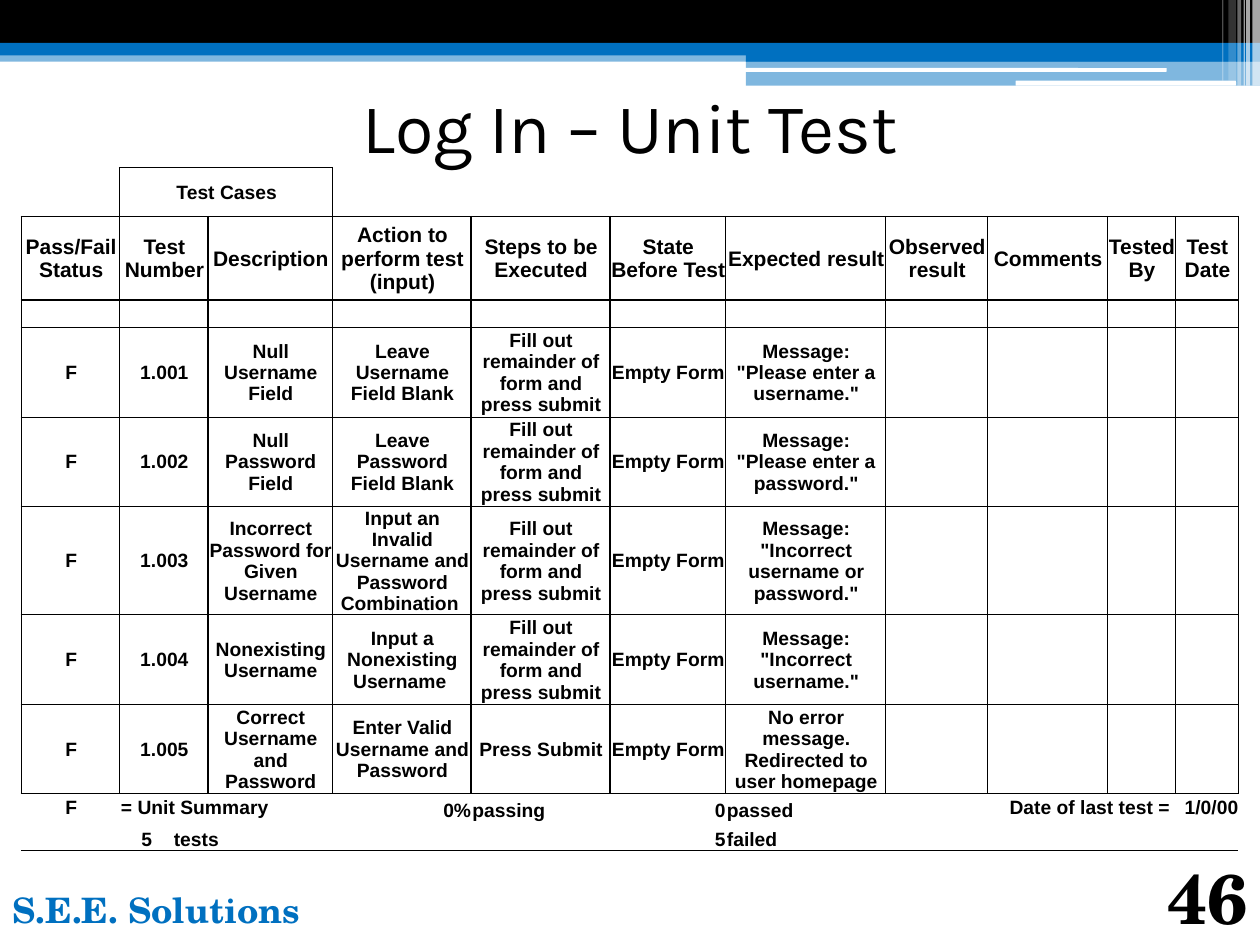
"""Build the log-in unit test slide with its banner, test table and footer."""
from lxml import etree
from pptx import Presentation
from pptx import util as u
from pptx.dml.color import RGBColor
from pptx.enum import shapes, text
from pptx.oxml import ns

SCALE = 9144
BLACK, BLUE, WHITE = "000000", "0070C0", "FFFFFF"
LEFT, CENTER, RIGHT = text.PP_ALIGN.LEFT, text.PP_ALIGN.CENTER, text.PP_ALIGN.RIGHT
MIDDLE, BOTTOM = text.MSO_ANCHOR.MIDDLE, text.MSO_ANCHOR.BOTTOM


def color(value):
    return RGBColor.from_string(value)


def write(frame, words, size, font, tint, bold, alignment):
    paragraph = frame.paragraphs[0]
    paragraph.alignment = alignment
    run = paragraph.add_run()
    run.text = words
    run.font.size = u.Pt(size)
    run.font.name = font
    run.font.bold = bold
    run.font.color.rgb = color(tint)


presentation = Presentation()
presentation.slide_width, presentation.slide_height = 1000 * SCALE, 750 * SCALE
slide = presentation.slides.add_slide(presentation.slide_layouts[5])

RECTANGLE, ROUNDED = shapes.MSO_SHAPE.RECTANGLE, shapes.MSO_SHAPE.ROUNDED_RECTANGLE
banner = [
    (RECTANGLE, 0, 40, 1000, 9, BLUE, 50),
    (RECTANGLE, 0, 0, 1000, 34, BLACK, 100),
    (RECTANGLE, 0, 34, 1000, 10, BLUE, 100),
    (RECTANGLE, 592, 39, 408, 10, BLUE, 100),
    (RECTANGLE, 592, 48, 408, 20, BLUE, 50),
    (ROUNDED, 591, 54, 335, 3, WHITE, 100),
    (ROUNDED, 806, 64, 175, 4, WHITE, 100),
    (RECTANGLE, 994, 0, 6, 68, WHITE, 65),
    (RECTANGLE, 989, 0, 3, 68, WHITE, 65),
    (RECTANGLE, 987, 0, 1, 68, WHITE, 60),
    (RECTANGLE, 982, 0, 3, 68, WHITE, 40),
    (RECTANGLE, 975, 0, 6, 64, WHITE, 20),
    (RECTANGLE, 970, 0, 1, 64, WHITE, 30),
]
for kind, left, top, width, height, tint, opacity in banner:
    shape = slide.shapes.add_shape(kind, left * SCALE, top * SCALE, width * SCALE, height * SCALE)
    shape.shadow.inherit = False
    shape.line.fill.background()
    shape.fill.solid()
    shape.fill.fore_color.rgb = color(tint)
    if opacity < 100:
        fill_color = shape.element.spPr.find(".//" + ns.qn("a:srgbClr"))
        etree.SubElement(fill_color, ns.qn("a:alpha"), val=str(opacity * 1000))

title = slide.shapes.title
title.left, title.top, title.width, title.height = 50 * SCALE, 50 * SCALE, 900 * SCALE, 100 * SCALE
title.text_frame.vertical_anchor = MIDDLE
write(title.text_frame, "Log In – Unit Test", 40, "Karla", BLACK, False, CENTER)
slide.shapes.element.append(title.element)

column_widths = [78, 42, 28, 99, 110, 110, 92, 127, 81, 95, 43, 11, 50]
row_heights = [39, 66, 22, 71, 71, 86, 71, 71, 22, 23]
headings = {0: "Pass/Fail Status", 1: "Test Number", 3: "Description",
            4: "Action to perform test (input)", 5: "Steps to be Executed",
            6: "State Before Test", 7: "Expected result", 8: "Observed result",
            9: "Comments", 10: "Tested By", 12: "Test Date"}
fill_out = "Fill out remainder of form and press submit"
cases = [
    ("Null Username Field", "Leave Username Field Blank", fill_out,
     'Message: "Please enter a username."'),
    ("Null Password Field", "Leave Password Field Blank", fill_out,
     'Message: "Please enter a password."'),
    ("Incorrect Password for Given Username",
     "Input an Invalid Username and Password Combination ", fill_out,
     'Message: "Incorrect username or password."'),
    ("Nonexisting Username", "Input a Nonexisting Username ", fill_out,
     'Message: "Incorrect username."'),
    ("Correct Username and Password", "Enter Valid Username and Password", "Press Submit",
     "No error message. Redirected to user homepage"),
]
rows = [{1: "Test Cases"}, headings, {}]
for number, (description, action, steps, expected) in enumerate(cases, 1):
    rows.append({0: "F", 1: f"1.00{number}", 3: description, 4: action, 5: steps,
                 6: "Empty Form", 7: expected})
rows.append({0: "F", 1: "= Unit Summary", 4: "0%", 5: "passing", 6: "0", 7: "passed",
             9: "Date of last test = ", 12: "1/0/00"})
rows.append({1: "5", 2: "tests", 6: "5", 7: "failed"})
summary_row, last_row = 8, 9
footer_alignment = {2: LEFT, 4: RIGHT, 5: LEFT, 6: RIGHT, 7: LEFT, 9: RIGHT, 12: RIGHT}
spans = {0: [(1, 3), (10, 11)], summary_row: [(1, 3), (9, 11)], last_row: [(2, 3), (9, 10)]}

table = slide.shapes.add_table(len(rows), len(column_widths), 17 * SCALE, 133 * SCALE,
                               sum(column_widths) * SCALE, sum(row_heights) * SCALE).table
table.first_row = table.horz_banding = False
for column, width in zip(table.columns, column_widths):
    column.width = width * SCALE
for r, contents in enumerate(rows):
    table.rows[r].height = row_heights[r] * SCALE
    for first, last in spans.get(r, [(1, 2), (10, 11)]):
        table.cell(r, first).merge(table.cell(r, last))
    for c in range(len(column_widths)):
        cell = table.cell(r, c)
        cell.margin_left = cell.margin_top = SCALE
        cell.margin_right = cell.margin_bottom = 0
        in_summary = r == summary_row and 4 <= c <= 7
        cell.vertical_anchor = BOTTOM if r == last_row or in_summary else MIDDLE
        size = 12 if r == 1 else 11
        if c in contents:
            alignment = footer_alignment.get(c, CENTER) if r >= summary_row else CENTER
            if (r, c) == (summary_row, 1):
                alignment = LEFT
            write(cell.text_frame, contents[c], size, "Arial", BLACK, True, alignment)
        else:
            etree.SubElement(cell.text_frame.paragraphs[0]._p, ns.qn("a:endParaRPr"),
                             sz=str(size * 100))
        if r == 0:
            edges = {"L": 1 <= c <= 4, "R": c <= 3, "T": 1 <= c <= 3, "B": 1}
        elif r >= summary_row:
            edges = {"L": 0, "R": 0, "T": r == summary_row, "B": r == last_row}
        else:
            edges = {"L": 1, "R": 1, "T": 1 if r <= 2 else 0.5,
                     "B": 1 if r in (1, summary_row - 1) else 0.5}
        properties = cell._tc.get_or_add_tcPr()
        for side, weight in edges.items():
            line = etree.SubElement(properties, ns.qn("a:ln" + side), w=str(int(weight * 12700)))
            if weight:
                solid = etree.SubElement(line, ns.qn("a:solidFill"))
                etree.SubElement(solid, ns.qn("a:srgbClr"), val=BLACK)
            else:
                etree.SubElement(line, ns.qn("a:noFill"))
        cell.fill.background()

footers = [
    (0, 700, 250, 50, "S.E.E. Solutions", 20, BLUE, LEFT, text.MSO_ANCHOR.TOP),
    (900, 690, 100, 60, "46", 40, BLACK, RIGHT, BOTTOM),
]
for left, top, width, height, words, size, tint, alignment, anchor in footers:
    box = slide.shapes.add_textbox(left * SCALE, top * SCALE, width * SCALE, height * SCALE)
    box.text_frame.word_wrap = True
    box.text_frame.vertical_anchor = anchor
    write(box.text_frame, words, size, "TeX Gyre Schola", tint, True, alignment)

presentation.save("out.pptx")
